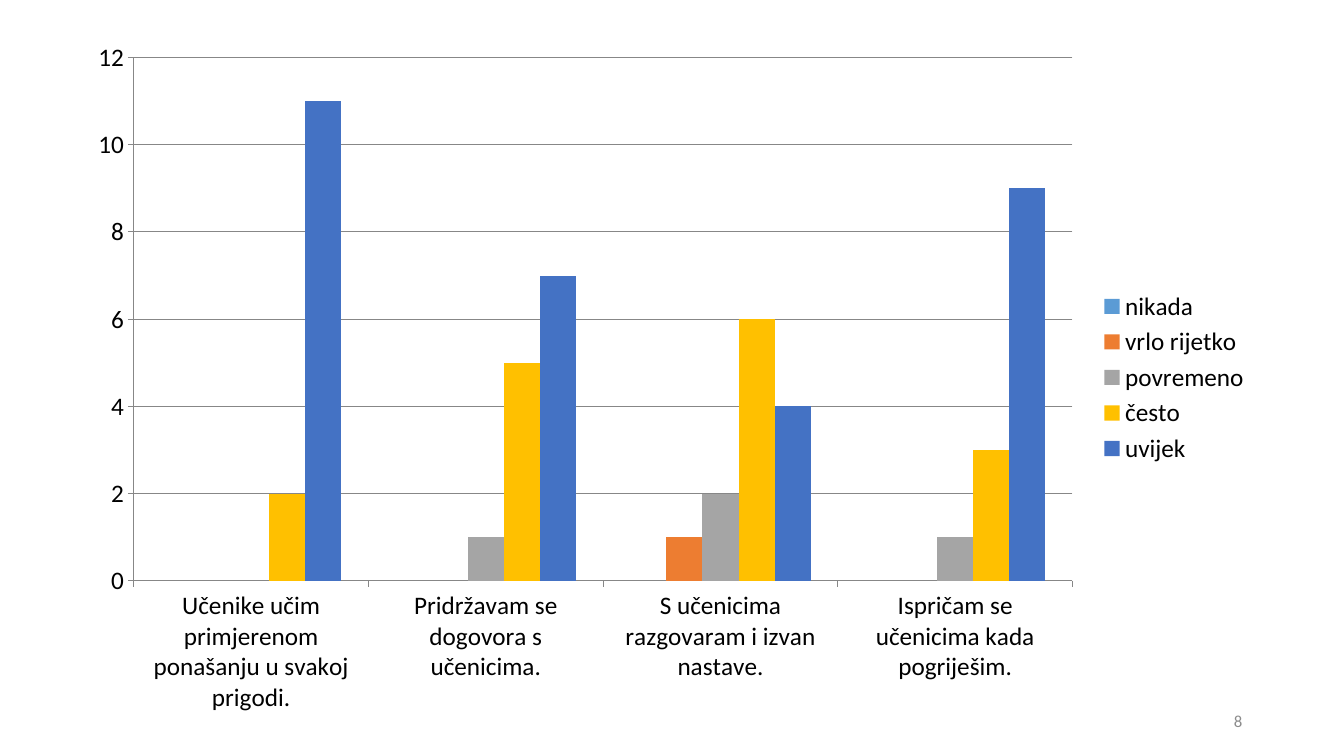
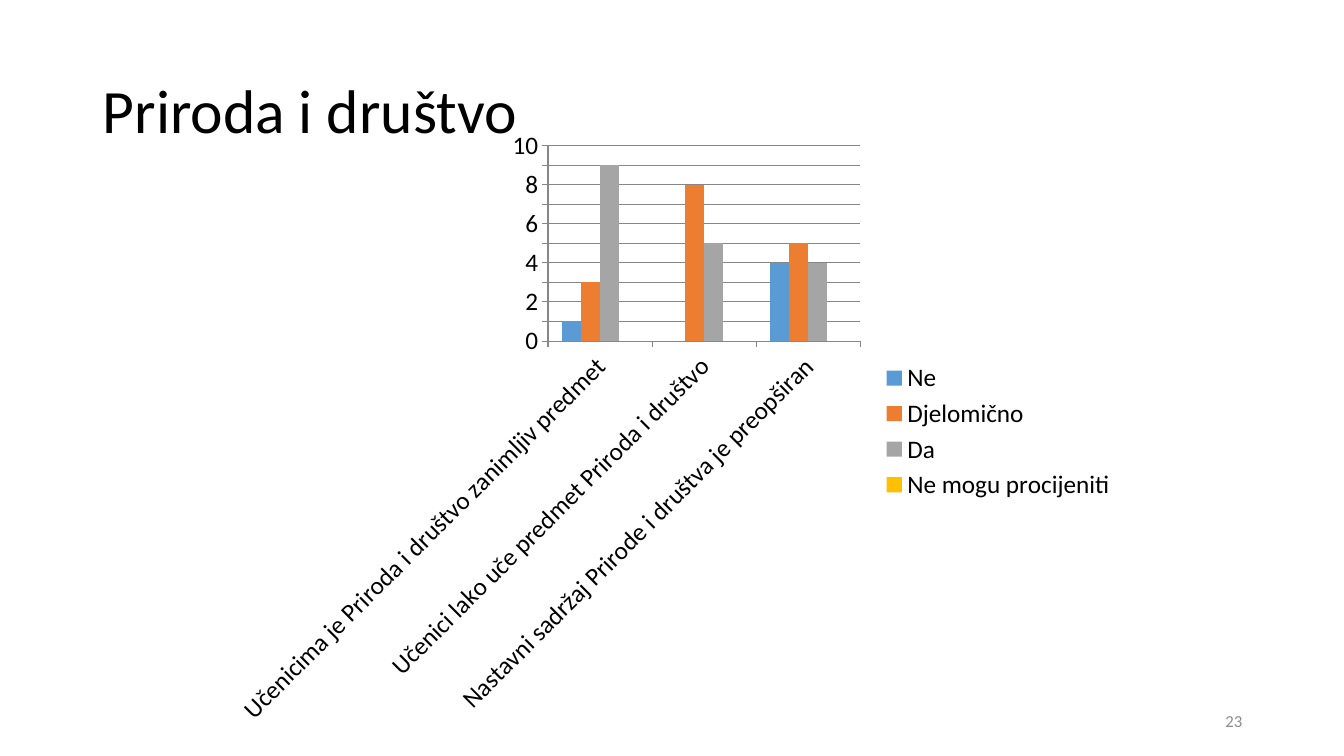
"""Build two survey slides with clustered column charts."""
import dataclasses
import typing

import pptx
import pptx.chart.data
import pptx.dml.color
import pptx.enum.chart
import pptx.enum.text
import pptx.util

Inches = pptx.util.Inches
FONT = "Calibri"
BLACK, GREY, AXIS = "000000", "8C8C8C", "878787"
PALETTE = ("5B9BD5", "ED7D31", "A5A5A5", "FFC000", "4472C4")
TITLE_ONLY, BLANK = 5, 6
TITLE_BOX = (0.92, 0.4, 11.5, 1.45)
NUMBER_BOX = (9.42, 6.95, 3, 0.4)
TITLE_FORMAT = {"size": 44, "color": BLACK}
NUMBER_FORMAT = {"size": 12, "color": GREY}
CHART_FORMAT = {"size": 18, "color": BLACK}


@dataclasses.dataclass(frozen=True)
class SurveyPage:
    """Content of one survey slide."""

    number: str
    box: tuple[float, float, float, float]
    categories: tuple[str, ...]
    answers: dict[str, tuple[typing.Optional[int], ...]]
    maximum: int
    unit: int
    label_angle: int = 0
    title: str = ""


PAGES = (
    SurveyPage(
        number="8",
        box=(0.74, 0.28, 11.76, 6.93),
        categories=(
            "Učenike učim primjerenom ponašanju u svakoj prigodi.",
            "Pridržavam se dogovora s učenicima.",
            "S učenicima razgovaram i izvan nastave.",
            "Ispričam se učenicima kada pogriješim.",
        ),
        answers={
            "nikada": (None, None, None, None),
            "vrlo rijetko": (None, None, 1, None),
            "povremeno": (None, 1, 2, 1),
            "često": (2, 5, 6, 3),
            "uvijek": (11, 7, 4, 9),
        },
        maximum=12,
        unit=2,
    ),
    SurveyPage(
        number="23",
        box=(2.17, 1.25, 9, 6.06),
        categories=(
            "Učenicima je Priroda i društvo zanimljiv predmet",
            "Učenici lako uče predmet Priroda i društvo",
            "Nastavni sadržaj Prirode i društva je preopširan",
        ),
        answers={
            "Ne": (1, None, 4),
            "Djelomično": (3, 8, 5),
            "Da": (9, 5, 4),
            "Ne mogu procijeniti": (None, None, None),
        },
        maximum=10,
        unit=1,
        label_angle=-45,
        title="Priroda i društvo",
    ),
)


def rgb(value: str) -> pptx.dml.color.RGBColor:
    """Turn a hex string into a colour."""
    return pptx.dml.color.RGBColor.from_string(value)


def set_values(target: typing.Any, values: dict[str, typing.Any]) -> None:
    """Set every named attribute on the target."""
    for name, value in values.items():
        setattr(target, name, value)


def set_font(font: typing.Any, size: float, color: str) -> None:
    """Apply the deck font with a size and colour."""
    set_values(font, {"name": FONT, "size": pptx.util.Pt(size)})
    font.color.rgb = rgb(color)


def set_line(line: typing.Any) -> None:
    """Apply the thin axis line."""
    line.color.rgb = rgb(AXIS)
    line.width = pptx.util.Pt(0.75)


def place(shape: typing.Any, box: tuple[float, float, float, float]) -> None:
    """Move and size a shape in inches."""
    set_values(shape, dict(zip(("left", "top", "width", "height"), map(Inches, box))))


def write_line(
    shape: typing.Any,
    text: str,
    text_format: dict[str, typing.Any],
    para_format: dict[str, typing.Any],
) -> None:
    """Write one vertically centred line into a shape."""
    frame = shape.text_frame
    set_values(
        frame,
        {
            "word_wrap": True,
            "auto_size": pptx.enum.text.MSO_AUTO_SIZE.NONE,
            "vertical_anchor": pptx.enum.text.MSO_ANCHOR.MIDDLE,
        },
    )
    para = frame.paragraphs[0]
    set_values(para, para_format)
    span = para.add_run()
    span.text = text
    set_font(span.font, **text_format)


def add_title(page: typing.Any, text: str) -> None:
    """Fill the title placeholder."""
    title = page.shapes.title
    place(title, TITLE_BOX)
    para_format = {"alignment": pptx.enum.text.PP_ALIGN.LEFT, "line_spacing": 0.9}
    write_line(title, text, TITLE_FORMAT, para_format)


def add_number(page: typing.Any, text: str) -> None:
    """Add the page number at the lower right."""
    box = page.shapes.add_textbox(*map(Inches, NUMBER_BOX))
    write_line(box, text, NUMBER_FORMAT, {"alignment": pptx.enum.text.PP_ALIGN.RIGHT})


def add_survey_chart(page: typing.Any, survey: SurveyPage) -> None:
    """Add the clustered column chart of the answers."""
    data = pptx.chart.data.CategoryChartData()
    data.categories = survey.categories
    for name, values in survey.answers.items():
        data.add_series(name, values)
    kind = pptx.enum.chart.XL_CHART_TYPE.COLUMN_CLUSTERED
    chart = page.shapes.add_chart(kind, *map(Inches, survey.box), data).chart
    set_values(chart, {"has_title": False, "has_legend": True})
    set_font(chart.font, **CHART_FORMAT)
    set_values(
        chart.legend,
        {
            "position": pptx.enum.chart.XL_LEGEND_POSITION.RIGHT,
            "include_in_layout": False,
        },
    )
    set_font(chart.legend.font, **CHART_FORMAT)
    plot = chart.plots[0]
    set_values(plot, {"gap_width": 150, "vary_by_categories": False})
    for series, color in zip(plot.series, PALETTE):
        series.invert_if_negative = False
        series.format.fill.solid()
        series.format.fill.fore_color.rgb = rgb(color)
    for axis in (chart.category_axis, chart.value_axis):
        axis.major_tick_mark = pptx.enum.chart.XL_TICK_MARK.OUTSIDE
        set_font(axis.tick_labels.font, **CHART_FORMAT)
        set_line(axis.format.line)
    set_values(
        chart.value_axis,
        {
            "minimum_scale": 0,
            "maximum_scale": survey.maximum,
            "major_unit": survey.unit,
            "has_major_gridlines": True,
        },
    )
    set_line(chart.value_axis.major_gridlines.format.line)
    label_body = chart.category_axis._element.find(".//{*}txPr/{*}bodyPr")
    label_body.set("rot", str(survey.label_angle * 60000))


def add_page(deck: typing.Any, survey: SurveyPage) -> None:
    """Add one survey slide to the deck."""
    layout = deck.slide_layouts[TITLE_ONLY if survey.title else BLANK]
    page = deck.slides.add_slide(layout)
    if survey.title:
        add_title(page, survey.title)
    add_survey_chart(page, survey)
    add_number(page, survey.number)


def main() -> None:
    """Build and save the deck."""
    deck = pptx.Presentation()
    set_values(deck, {"slide_width": Inches(13.33), "slide_height": Inches(7.5)})
    for survey in PAGES:
        add_page(deck, survey)
    deck.save("out.pptx")


if __name__ == "__main__":
    main()
